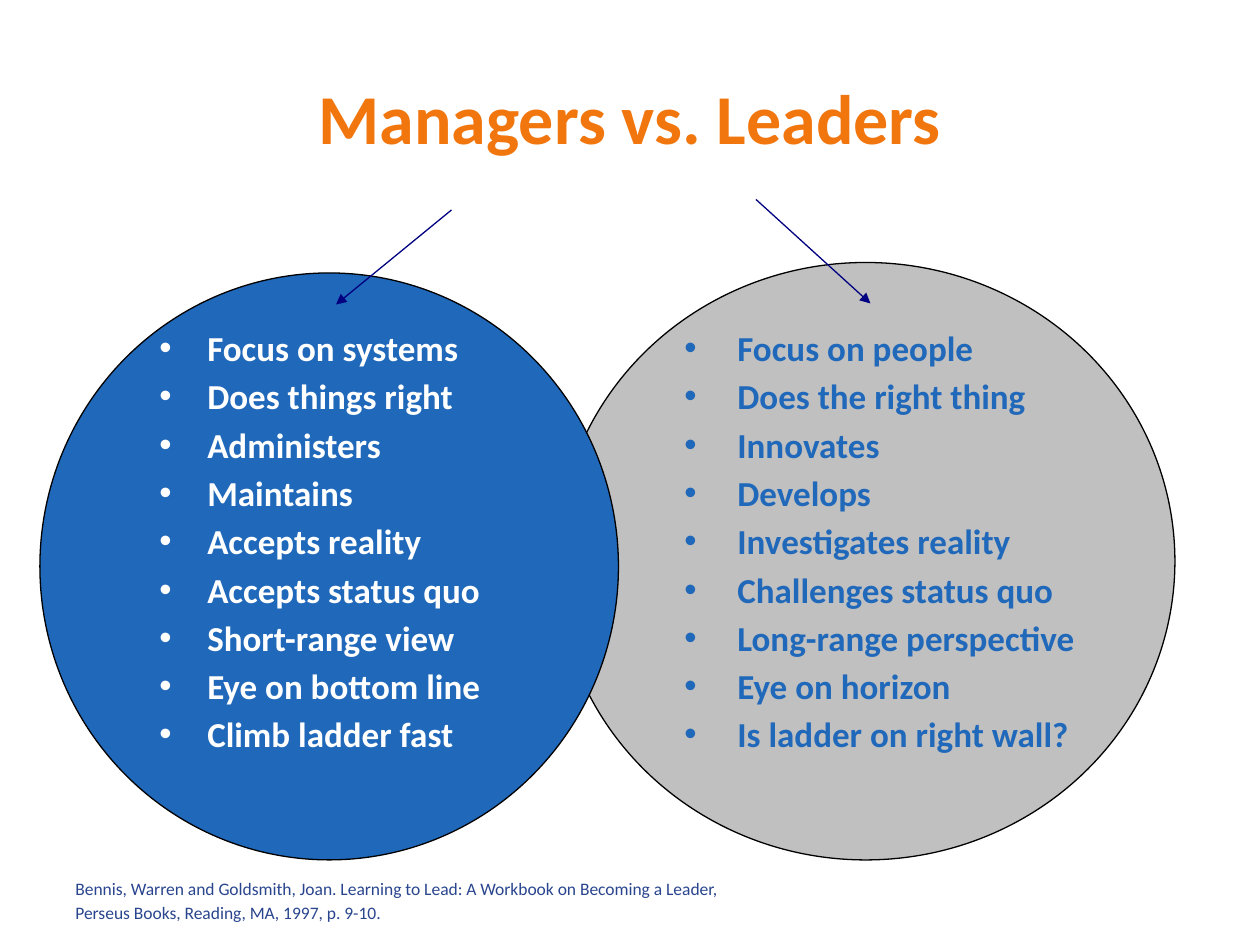
from pptx import Presentation
from pptx.dml.color import RGBColor
from pptx.enum.shapes import MSO_CONNECTOR as CONN, MSO_SHAPE as SHAPE
from pptx.enum.text import MSO_ANCHOR as ANCHOR, PP_ALIGN as ALIGN
from pptx.oxml.ns import qn
from pptx.util import Inches, Pt
from lxml.etree import SubElement

prs = Presentation()
prs.slide_width, prs.slide_height = Inches(10), Inches(7.5)
s = prs.slides.add_slide(prs.slide_layouts[6])
BLUE = "2068BA"


def grid(*cells):
    """Grid of 120 columns by 90 rows, each cell 1/12 inch."""
    return [Inches(c / 12) for c in cells]


def add_text(box, lines, size, color, bold=False, gap=0, indent=0):
    tf = s.shapes.add_textbox(*grid(*box)).text_frame
    tf.word_wrap = True
    tf.text = "\n".join(lines)
    for i, p in enumerate(tf.paragraphs):
        if indent:
            pPr = p._p.get_or_add_pPr()
            pPr.set("marL", str(Inches(indent)))
            pPr.set("indent", str(-Inches(indent)))
            SubElement(pPr, qn("a:buFont")).set("typeface", "Arial")
            SubElement(pPr, qn("a:buChar")).set("char", "•")
        if i:
            p.space_before = Pt(gap)
        font = p.runs[0].font
        font.name, font.size, font.bold = "Calibri", Pt(size), bold
        font.color.rgb = RGBColor.from_string(color)
    return tf


# Overlapping circles, leaders behind managers
for box, fill in [((53, 25, 58.9, 56.9), "C0C0C0"),
                  ((3.8, 26, 55.1, 55.9), BLUE)]:
    sp = s.shapes.add_shape(SHAPE.OVAL, *grid(*box))
    sp.shadow.inherit = False
    sp.fill.solid()
    sp.fill.fore_color.rgb = RGBColor.from_string(fill)
    sp.line.color.rgb = RGBColor.from_string("000000")
    sp.line.width = Pt(0.75)

# Title
title = add_text((6, 3.6, 108, 15), ["Managers vs. Leaders"], 40, "F2760E", bold=True)
title.vertical_anchor = ANCHOR.MIDDLE
title.paragraphs[0].alignment = ALIGN.CENTER

# Traits of each role
managers = ["Focus on systems", "Does things right", "Administers", "Maintains",
            "Accepts reality", "Accepts status quo", "Short-range view",
            "Eye on bottom line", "Climb ladder fast"]
leaders = ["Focus on people", "Does the right thing", "Innovates", "Develops",
           "Investigates reality", "Challenges status quo",
           "Long-range perspective", "Eye on horizon", "Is ladder on right wall?"]
for left, traits, color, indent in [(14, managers, "FFFFFF", 0.38),
                                    (64, leaders, BLUE, 0.42)]:
    add_text((left, 30.5, 50, 49.5), traits, 20, color, bold=True, gap=3.6, indent=indent)

# Source citation
add_text((6, 83, 109.6, 5.6),
         ["Bennis, Warren and Goldsmith, Joan. Learning to Lead: A Workbook on Becoming a Leader,",
          "Perseus Books, Reading, MA, 1997, p. 9-10."], 10, "29458E", gap=1.6)

# Arrows from the title to the circles
for ends in [(43, 20, 32, 29), (72, 19, 82.9, 28.9)]:
    arrow = s.shapes.add_connector(CONN.STRAIGHT, *grid(*ends))
    arrow.line.color.rgb = RGBColor.from_string("000080")
    arrow.line.width = Pt(0.75)
    SubElement(arrow.line._get_or_add_ln(), qn("a:tailEnd")).set("type", "triangle")
    SubElement(arrow._element.spPr, qn("a:effectLst"))

prs.save("out.pptx")
